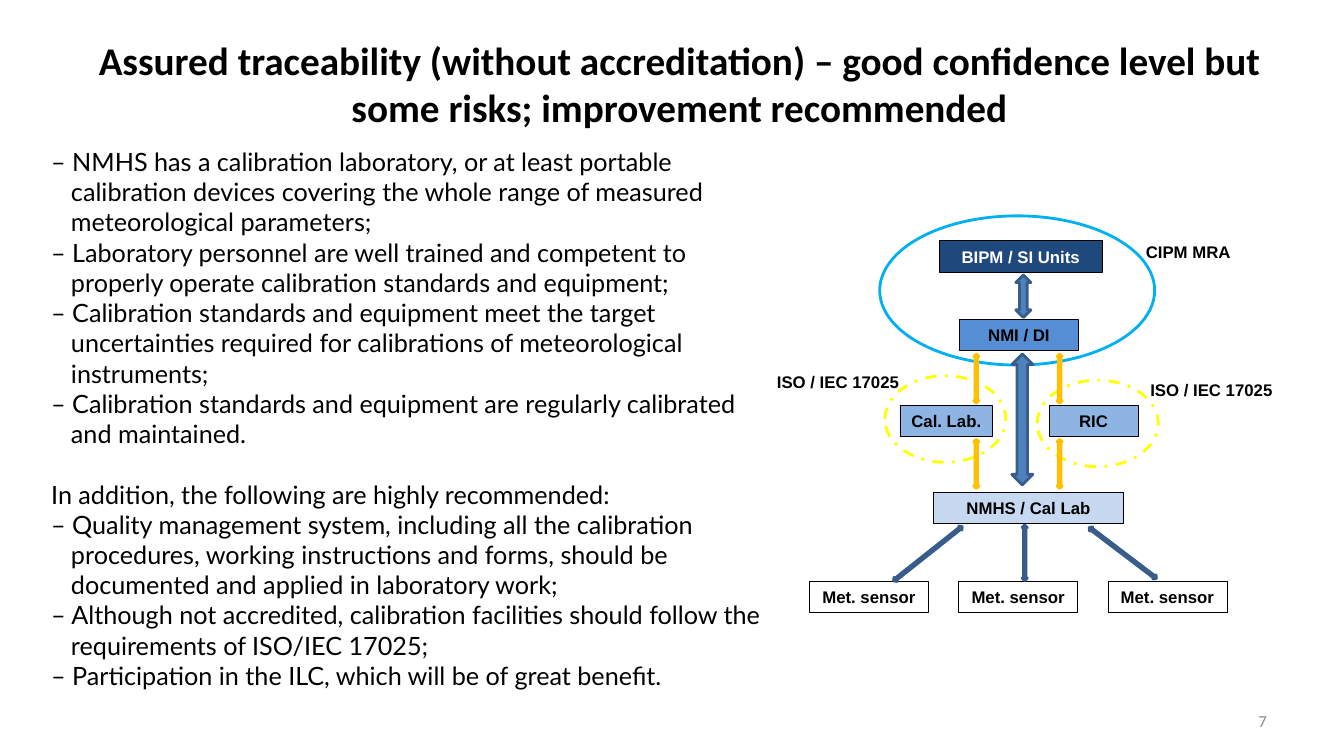
import pptx
import pptx.dml.color
import pptx.enum.dml
import pptx.enum.shapes
import pptx.enum.text
import pptx.util

Cm, Pt = pptx.util.Cm, pptx.util.Pt
SHAPE = pptx.enum.shapes.MSO_SHAPE
ALIGN = pptx.enum.text.PP_ALIGN
ANCHOR = pptx.enum.text.MSO_ANCHOR

TITLE = ("Assured traceability (without accreditation) – good confidence level but\n"
         "some risks; improvement recommended")
PRACTICES = [
    "– NMHS has a calibration laboratory, or at least portable calibration devices "
    "covering the whole range of measured meteorological parameters;",
    "– Laboratory personnel are well trained and competent to properly operate "
    "calibration standards and equipment;",
    "– Calibration standards and equipment meet the target uncertainties required "
    "for calibrations of meteorological instruments;",
    "– Calibration standards and equipment are regularly calibrated and maintained.",
]
RECOMMENDATIONS = [
    "In addition, the following are highly recommended:",
    "– Quality management system, including all the calibration procedures, working "
    "instructions and forms, should be documented and applied in laboratory work;",
    "– Although not accredited, calibration facilities should follow the "
    "requirements of ISO/IEC 17025;",
    "– Participation in the ILC, which will be of great benefit.",
]

# All places are left, top, width, height in centimetres.
BLUE, NAVY, AMBER, YELLOW = "4F81BD", "385D8A", "FFC000", "FFFF00"
SCOPES = [
    ((22.17, 5.44, 6.93, 3.76), "00B0F0", False),
    ((22.3, 9.47, 3.05, 2.18), YELLOW, True),
    ((26.14, 9.58, 3.05, 2.18), YELLOW, True),
]
BOX_HEIGHT = 0.79
LEVELS = [
    ("BIPM / SI Units", 23.67, 6.07, 4.11, "1F497D", "FFFFFF"),
    ("NMI / DI", 24.18, 8.05, 3, "558ED5", "000000"),
    ("Cal. Lab.", 22.68, 10.21, 2.34, "8EB4E3", "000000"),
    ("RIC", 26.44, 10.21, 2.24, "8EB4E3", "000000"),
    ("NMHS / Cal Lab", 23.52, 12.4, 4.8, "C6D9F1", "000000"),
]
SENSOR_LEFT, SENSOR_STEP, SENSOR_TOP, SENSOR_WIDTH = 20.4, 3.76, 14.65, 3
LABELS = [
    ("CIPM MRA", (28.27, 5.94, 3.35, BOX_HEIGHT)),
    ("ISO / IEC 17025", (28.55, 9.42, 3.96, BOX_HEIGHT)),
    ("ISO / IEC 17025", (19.15, 9.22, 3.94, BOX_HEIGHT)),
]
UP_DOWN, LEFT_RIGHT = SHAPE.UP_DOWN_ARROW, SHAPE.LEFT_RIGHT_ARROW
ARROWS = [
    (UP_DOWN, (25.6, 6.93, 0.38, 1.07), NAVY, 0),
    (UP_DOWN, (25.5, 8.92, 0.53, 3.3), NAVY, 0),
    (LEFT_RIGHT, (22.28, 13.89, 2.21, 0.13), NAVY, 321.6),
    (UP_DOWN, (25.76, 13.23, 0.13, 1.4), NAVY, 0),
    (LEFT_RIGHT, (27.23, 13.87, 2.13, 0.13), NAVY, 37.2),
]
ARROWS += [(UP_DOWN, (left, top, 0.13, 1.24), AMBER, 0)
           for left in (24.54, 26.64) for top in (8.92, 11.07)]


def color(value):
    return pptx.dml.color.RGBColor.from_string(value)


def write(shape, lines, font, size, ink="000000", bold=False,
          align=ALIGN.CENTER, anchor=ANCHOR.MIDDLE):
    """Fill a shape with one paragraph per line and return the paragraphs."""
    frame = shape.text_frame
    frame.word_wrap = True
    frame.vertical_anchor = anchor
    for index, line in enumerate(lines):
        paragraph = frame.add_paragraph() if index else frame.paragraphs[0]
        paragraph.text = line
        paragraph.alignment = align
        paragraph.font.name = font
        paragraph.font.size = Pt(size)
        paragraph.font.bold = bold
        paragraph.font.color.rgb = color(ink)
    return frame.paragraphs


def add_text(slide, place, lines, *style, **options):
    box = slide.shapes.add_textbox(*map(Cm, place))
    return write(box, lines, *style, **options)


def add_shape(slide, kind, place, line, width, fill=None):
    shape = slide.shapes.add_shape(kind, *map(Cm, place))
    shape.shadow.inherit = False
    shape.line.color.rgb = color(line)
    shape.line.width = Pt(width)
    if fill:
        shape.fill.solid()
        shape.fill.fore_color.rgb = color(fill)
    else:
        shape.fill.background()
    return shape


def add_box(slide, text, left, top, width, fill, ink):
    box = add_shape(slide, SHAPE.RECTANGLE, (left, top, width, BOX_HEIGHT),
                    "000000", 0.5, fill)
    box.text_frame.margin_left = box.text_frame.margin_right = 0
    write(box, [text], "Arial", 12, ink, bold=True)


def add_diagram(slide):
    for place, line, dashed in SCOPES:
        scope = add_shape(slide, SHAPE.OVAL, place, line, 2)
        if dashed:
            scope.line.dash_style = pptx.enum.dml.MSO_LINE.DASH_DOT
    for level in LEVELS:
        add_box(slide, *level)
    for index in range(3):
        add_box(slide, "Met. sensor", SENSOR_LEFT + index * SENSOR_STEP,
                SENSOR_TOP, SENSOR_WIDTH, "FFFFFF", "000000")
    for text, place in LABELS:
        add_text(slide, place, [text], "Arial", 12, bold=True)
    for kind, place, line, rotation in ARROWS:
        arrow = add_shape(slide, kind, place, line, 2, BLUE)
        arrow.rotation = rotation


def main():
    presentation = pptx.Presentation()
    presentation.slide_width, presentation.slide_height = Cm(33.87), Cm(19.05)
    slide = presentation.slides.add_slide(presentation.slide_layouts[6])

    add_text(slide, (1.88, 0.51, 30.48, 3.18), [TITLE], "Calibri", 28, bold=True)
    add_text(slide, (24.28, 17.65, 7.9, 1.02), ["7"], "Calibri", 12, "8C8C8C",
             align=ALIGN.RIGHT)
    add_diagram(slide)

    paragraphs = add_text(slide, (1.04, 3.56, 18.57, 13.34),
                          PRACTICES + RECOMMENDATIONS, "Lato", 18,
                          align=ALIGN.LEFT, anchor=ANCHOR.TOP)
    for paragraph in paragraphs:
        properties = paragraph._p.get_or_add_pPr()
        properties.set("marL", str(Cm(0.5)))
        properties.set("indent", str(Cm(-0.5)))
    paragraphs[len(PRACTICES)].space_before = Pt(21.6)

    presentation.save("out.pptx")


if __name__ == "__main__":
    main()
